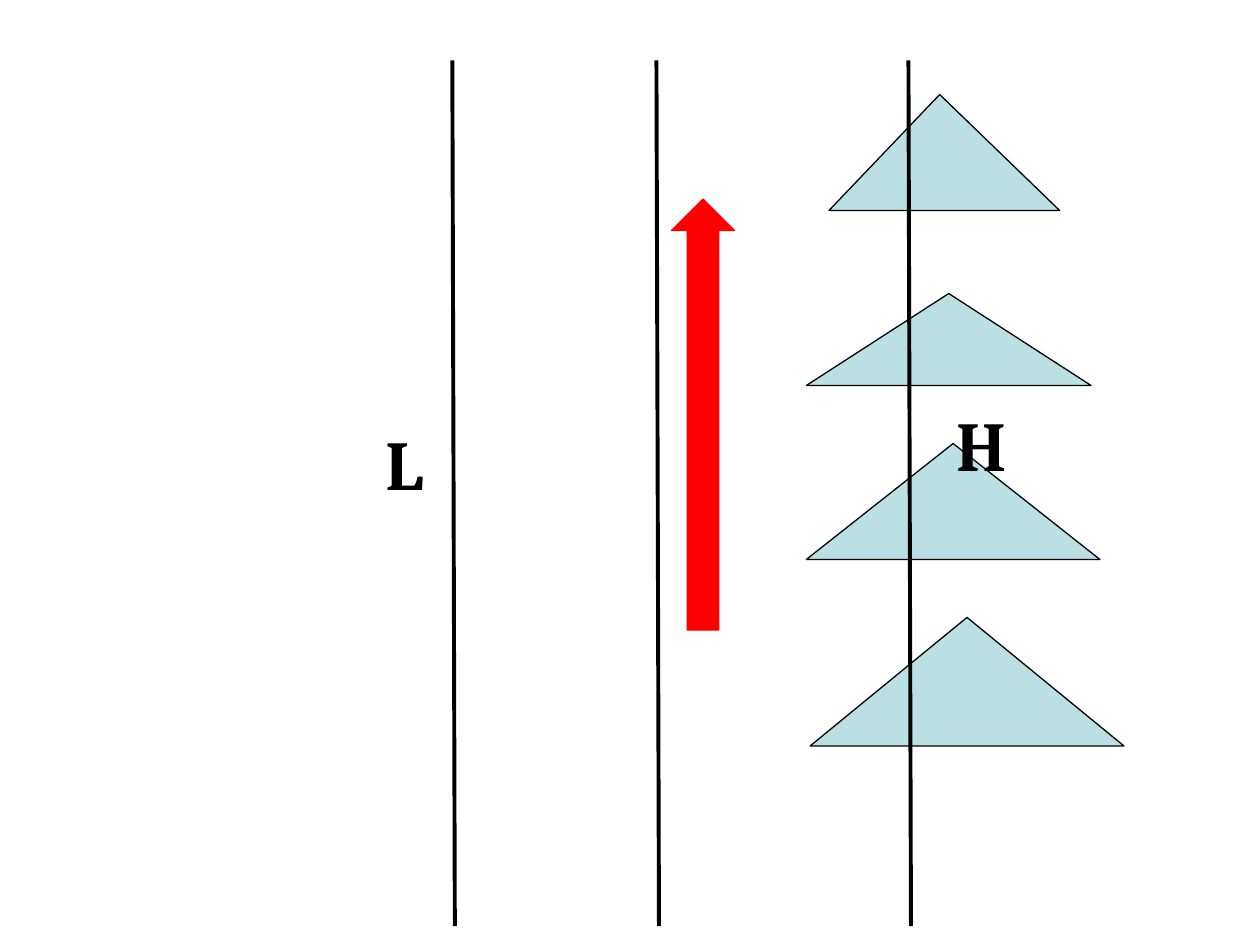
from typing import NamedTuple

from lxml.etree import SubElement
from pptx import Presentation
from pptx.dml.color import RGBColor
from pptx.enum.shapes import MSO_CONNECTOR, MSO_SHAPE as Shape
from pptx.enum.text import MSO_AUTO_SIZE
from pptx.oxml.ns import qn
from pptx.util import Inches, Pt

BLACK = RGBColor(0x00, 0x00, 0x00)
RED = RGBColor(0xFF, 0x00, 0x00)
PALE_TEAL = RGBColor(0xBB, 0xE0, 0xE3)

LINE_TOP, LINE_BOTTOM, LINE_SLANT = 0.48, 7.35, 0.02


class Box(NamedTuple):
    left: float
    top: float
    width: float
    height: float


class Mountain(NamedTuple):
    box: Box
    peak: float = 0.5


class Label(NamedTuple):
    text: str
    box: Box


MOUNTAINS = [
    Mountain(Box(6.58, 0.75, 1.83, 0.92), peak=0.48),
    Mountain(Box(6.4, 2.33, 2.26, 0.73)),
    Mountain(Box(6.4, 3.52, 2.33, 0.92)),
    Mountain(Box(6.43, 4.9, 2.49, 1.02)),
]
WIND = Box(5.33, 1.58, 0.5, 3.42)
ISOBARS = [3.59, 5.21, 7.21]
LABELS = [
    Label("H", Box(7.49, 3.14, 0.64, 0.77)),
    Label("L", Box(2.96, 3.29, 0.58, 0.77)),
]


def add_figure(s, kind: Shape, box: Box, fill: RGBColor, line: RGBColor):
    sp = s.shapes.add_shape(kind, *map(Inches, box))
    sp.shadow.inherit = False
    sp.fill.solid()
    sp.fill.fore_color.rgb = fill
    sp.line.color.rgb = line
    sp.line.width = Pt(0.75)
    return sp


def add_mountain(s, mountain: Mountain) -> None:
    sp = add_figure(s, Shape.ISOSCELES_TRIANGLE, mountain.box, PALE_TEAL, BLACK)
    sp.adjustments[0] = mountain.peak


def add_isobar(s, x: float) -> None:
    ends = (x, LINE_TOP, x + LINE_SLANT, LINE_BOTTOM)
    line = s.shapes.add_connector(MSO_CONNECTOR.STRAIGHT, *map(Inches, ends))
    line.line.color.rgb = BLACK
    line.line.width = Pt(2.25)
    SubElement(line._element.spPr, qn("a:effectLst"))


def add_label(s, label: Label) -> None:
    tf = s.shapes.add_textbox(*map(Inches, label.box)).text_frame
    tf.word_wrap = False
    tf.auto_size = MSO_AUTO_SIZE.SHAPE_TO_FIT_TEXT
    r = tf.paragraphs[0].add_run()
    r.text = label.text
    r.font.name = "Cambria"
    r.font.size = Pt(40)
    r.font.bold = True
    r.font.color.rgb = BLACK


def main() -> None:
    prs = Presentation()
    prs.slide_width, prs.slide_height = Inches(10), Inches(7.5)
    s = prs.slides.add_slide(prs.slide_layouts[6])

    # Mountain range
    for mountain in MOUNTAINS:
        add_mountain(s, mountain)

    # Wind along the range
    add_figure(s, Shape.UP_ARROW, WIND, RED, RED)

    # Isobars with the low and high pressure marks
    for x in ISOBARS:
        add_isobar(s, x)
    for label in LABELS:
        add_label(s, label)

    prs.save("out.pptx")


if __name__ == "__main__":
    main()
